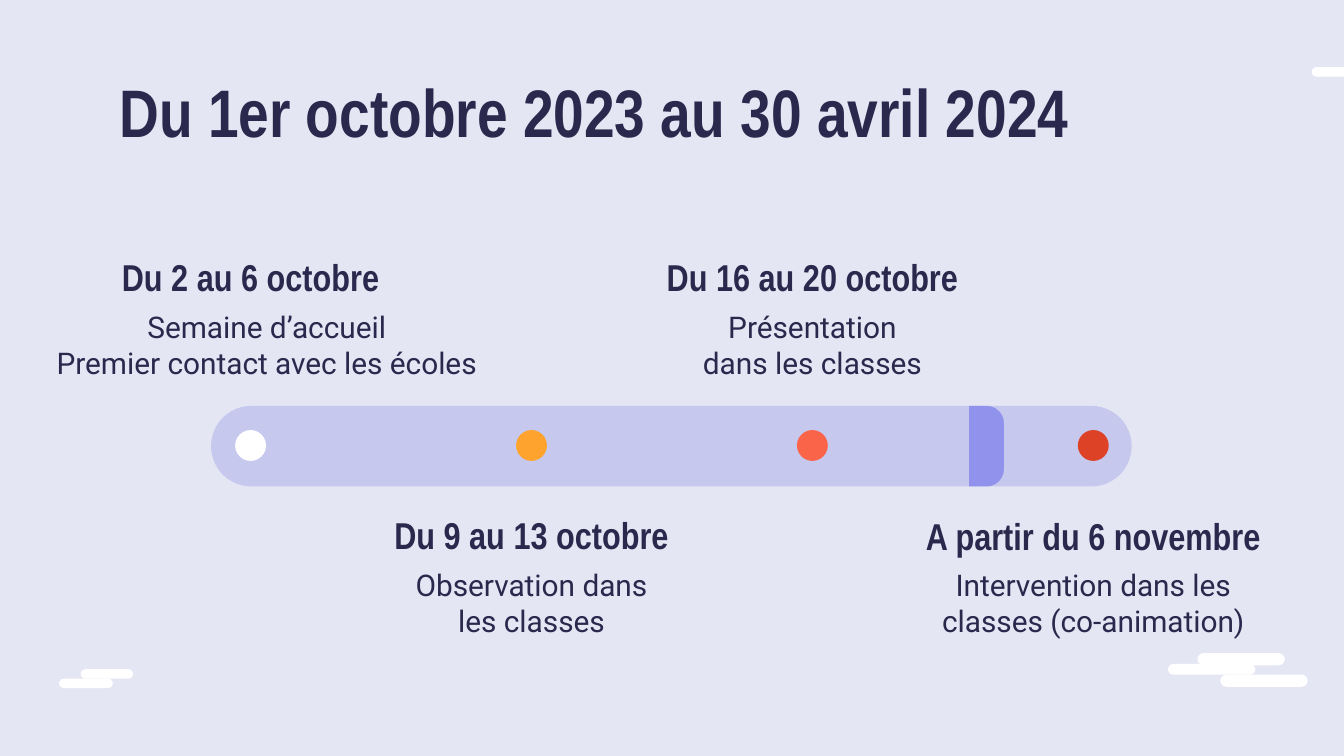
"""Build a school-placement timeline slide with four dated steps."""
from pptx import Presentation
from pptx.dml.color import RGBColor
from pptx.enum.shapes import MSO_SHAPE
from pptx.enum.text import MSO_ANCHOR, PP_ALIGN
from pptx.util import Inches, Pt

ROUND = MSO_SHAPE.ROUNDED_RECTANGLE
TAB = MSO_SHAPE.ROUND_2_SAME_RECTANGLE
OVAL = MSO_SHAPE.OVAL
TOP = MSO_ANCHOR.TOP
LEFT, CENTER = PP_ALIGN.LEFT, PP_ALIGN.CENTER

INK = RGBColor(0x2A, 0x28, 0x4C)
PALE = RGBColor(0xE4, 0xE6, 0xF4)
LILAC = RGBColor(0xC6, 0xC8, 0xEE)
VIOLET = RGBColor(0x90, 0x92, 0xEC)
WHITE = RGBColor(0xFF, 0xFF, 0xFF)
AMBER = RGBColor(0xFE, 0xA4, 0x2E)
CORAL = RGBColor(0xFA, 0x64, 0x49)
RED = RGBColor(0xDD, 0x42, 0x26)

deck = Presentation()
deck.slide_width, deck.slide_height = Inches(10), Inches(10 * 9 / 16)
slide = deck.slides.add_slide(deck.slide_layouts[6])
slide.background.fill.solid()
slide.background.fill.fore_color.rgb = PALE


def add_text(text, left, top, width, height, size, font, bold=False, align=CENTER, after=16):
    box = slide.shapes.add_textbox(Inches(left), Inches(top), Inches(width), Inches(height))
    frame = box.text_frame
    frame.word_wrap = True
    frame.vertical_anchor = TOP
    frame.margin_left = frame.margin_right = Inches(0.1)
    frame.margin_top = frame.margin_bottom = Inches(0.1)
    line = frame.paragraphs[0]
    line.text = text
    line.alignment = align
    line.space_after = Pt(after)
    for run in line.runs:
        run.font.size = Pt(size)
        run.font.name = font
        run.font.bold = bold
        run.font.color.rgb = INK


def add_shape(kind, left, top, width, height, color):
    shape = slide.shapes.add_shape(kind, Inches(left), Inches(top), Inches(width), Inches(height))
    shape.shadow.inherit = False
    shape.fill.solid()
    shape.fill.fore_color.rgb = color
    shape.line.fill.background()
    return shape


clouds = [
    (8.69, 4.94, 0.65, 0.08),
    (8.91, 4.86, 0.65, 0.09),
    (9.08, 5.02, 0.65, 0.09),
    (9.76, 0.5, 0.53, 0.07),
    (0.44, 5.05, 0.4, 0.07),
    (0.6, 4.98, 0.39, 0.07),
]
for cloud in clouds:
    add_shape(ROUND, *cloud, WHITE).adjustments[0] = 0.5

add_text("Du 1er octobre 2023 au 30 avril 2024", 0.79, 0.42, 8.43, 0.67,
         size=36, font="Arial Narrow", bold=True, align=LEFT, after=0)

add_shape(ROUND, 1.57, 3.02, 6.85, 0.6, LILAC).adjustments[0] = 0.5

steps = [
    ("Du 2 au 6 octobre", "Semaine d’accueil\nPremier contact avec les écoles",
     1.79, 2.33, 3.39, 0.12, WHITE),
    ("Du 9 au 13 octobre", "Observation dans les classes", 3.71, 2.34, 1.94, 0, AMBER),
    ("Du 16 au 20 octobre", "Présentation dans les classes", 1.79, 2.51, 1.94, 0, CORAL),
    ("A partir du 6 novembre", "Intervention dans les classes (co-animation)",
     3.72, 2.94, 2.73, 0, RED),
]
START, STEP, DOT = 1.865, 2.09, 0.23
START = round(1.75 + DOT / 2, 3)
for index, (date, detail, top, wide, span, shift, color) in enumerate(steps):
    mid = START + index * STEP
    below = 2.2 if top < 3 else 4.12
    add_text(date, mid - wide / 2, top, wide, 0.41, size=20, font="Arial Narrow", bold=True)
    add_text(detail, mid - span / 2 + shift, below, span, 0.67, size=16, font="Roboto")
    add_shape(OVAL, mid - DOT / 2, 3.2, DOT, DOT, color)

marker = add_shape(TAB, 7.04, 3.19, 0.6, 0.26, VIOLET)
marker.adjustments[0] = 0.5
marker.adjustments[1] = 0
marker.rotation = 90

deck.save("out.pptx")
